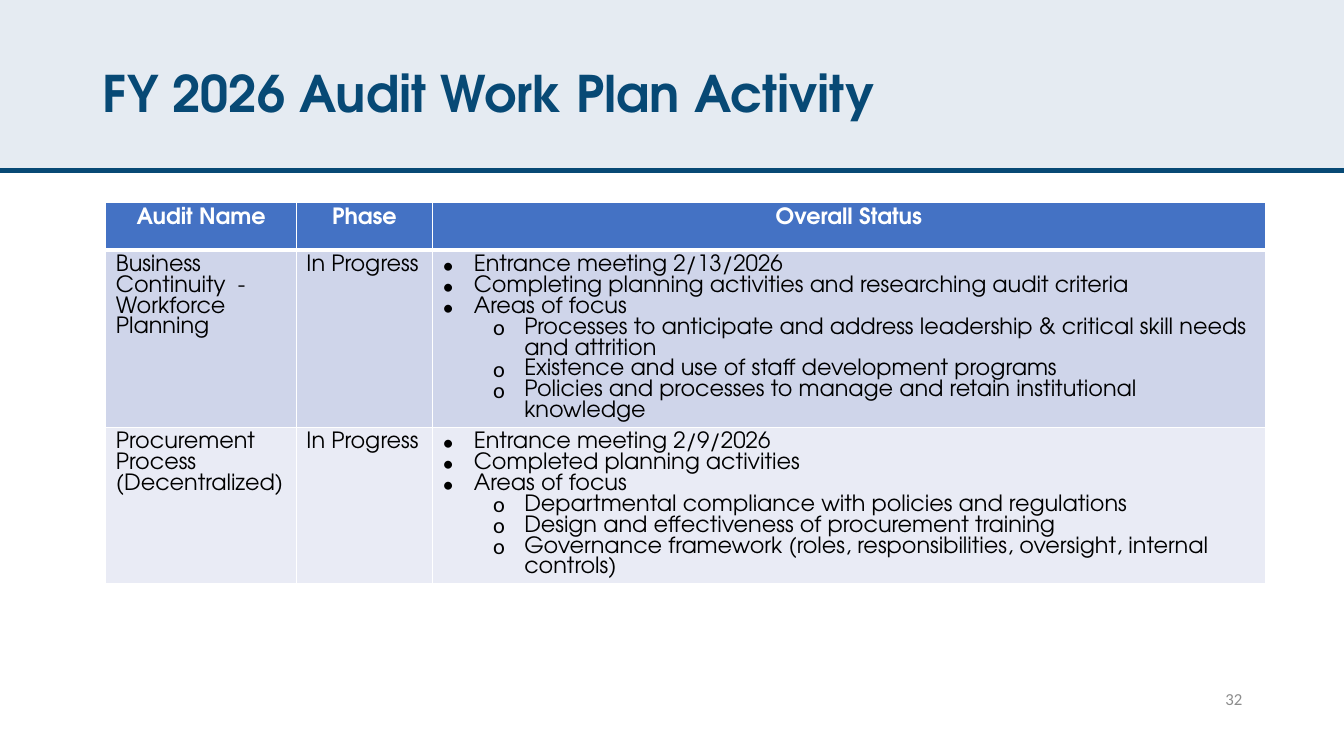
from lxml.etree import SubElement
from pptx import Presentation
from pptx.dml.color import RGBColor
from pptx.enum.shapes import MSO_CONNECTOR as Connector, MSO_SHAPE as Shape
from pptx.enum.text import MSO_ANCHOR as Anchor, PP_ALIGN as Align
from pptx.oxml.ns import qn
from pptx.util import Inches, Pt

NAVY = RGBColor(0x07, 0x49, 0x75)
PALE_BLUE = RGBColor(0xE5, 0xEB, 0xF2)
HEADER_BLUE = RGBColor(0x44, 0x72, 0xC4)
BAND_DARK = RGBColor(0xCF, 0xD5, 0xEA)
BAND_LIGHT = RGBColor(0xE9, 0xEB, 0xF5)
GRAY = RGBColor(0x8C, 0x8C, 0x8C)
WHITE = RGBColor(0xFF, 0xFF, 0xFF)
BLACK = RGBColor(0, 0, 0)
HEADING_FONT = "TeX Gyre Adventor"
PLAIN_FONT = "Calibri"

SLIDE_WIDTH = 13.33
COLUMN_WIDTHS = [1.89, 1.35, 8.26]
ROW_HEIGHTS = [0.47, 1.76, 1.55]
BULLETS = [("•", 0.31), ("o", 0.81)]
BULLET_HANG = 0.31

HEADINGS = ["Audit Name", "Phase", "Overall Status"]
# Each status line is (level, text).
AUDITS = [
    ("Business Continuity  - Workforce Planning", "In Progress", [
        (0, "Entrance meeting 2/13/2026"),
        (0, "Completing planning activities and researching audit criteria"),
        (0, "Areas of focus"),
        (1, "Processes to anticipate and address leadership & critical skill needs and attrition"),
        (1, "Existence and use of staff development programs"),
        (1, "Policies and processes to manage and retain institutional knowledge"),
    ]),
    ("Procurement Process (Decentralized)", "In Progress", [
        (0, "Entrance meeting 2/9/2026"),
        (0, "Completed planning activities"),
        (0, "Areas of focus"),
        (1, "Departmental compliance with policies and regulations"),
        (1, "Design and effectiveness of procurement training"),
        (1, "Governance framework (roles, responsibilities, oversight, internal controls)"),
    ]),
]


def write(para, text, size=16, font=HEADING_FONT, color=BLACK, bold=False,
          align=Align.LEFT, line_spacing=None):
    para.alignment = align
    if line_spacing:
        para.line_spacing = line_spacing
    span = para.add_run()
    span.text = text
    span.font.size = Pt(size)
    span.font.name = font
    span.font.bold = bold
    span.font.color.rgb = color


def add_bullet(para, level):
    mark, indent = BULLETS[level]
    para.level = level
    properties = para._p.get_or_add_pPr()
    properties.set("marL", str(Inches(indent)))
    properties.set("indent", str(-Inches(BULLET_HANG)))
    SubElement(properties, qn("a:buFont"), typeface=PLAIN_FONT)
    SubElement(properties, qn("a:buChar"), char=mark)


def style_cell(cell, fill, bottom=1):
    """Give the cell white borders, then its fill."""
    properties = cell._tc.get_or_add_tcPr()
    for side, width in (("L", 1), ("R", 1), ("T", 1), ("B", bottom)):
        border = SubElement(properties, qn(f"a:ln{side}"), w=str(Pt(width)))
        paint = SubElement(border, qn("a:solidFill"))
        SubElement(paint, qn("a:srgbClr"), val=str(WHITE))
    cell.fill.solid()
    cell.fill.fore_color.rgb = fill


def add_header(page, left, top, width, height):
    band = page.shapes.add_shape(Shape.RECTANGLE, Inches(left), Inches(top),
                                 Inches(width), Inches(height))
    band.shadow.inherit = False
    band.fill.solid()
    band.fill.fore_color.rgb = PALE_BLUE
    band.line.fill.background()

    rule_top = Inches(top + height - 0.01)
    rule = page.shapes.add_connector(Connector.STRAIGHT, Inches(left), rule_top,
                                     Inches(left + width), rule_top)
    rule.line.color.rgb = NAVY
    rule.line.width = Pt(3.5)
    SubElement(rule._element.spPr, qn("a:effectLst"))

    title = page.shapes.title
    title.left, title.top = Inches(left + 0.92), Inches(top + 0.4)
    title.width, title.height = Inches(11.5), Inches(1.1)
    title.text_frame.vertical_anchor = Anchor.MIDDLE
    write(title.text_frame.paragraphs[0], "FY 2026 Audit Work Plan Activity",
          size=36, color=NAVY, bold=True, line_spacing=0.9)
    # Bring the title in front of the band.
    title.element.getparent().append(title.element)


def add_audit_table(page, left, top):
    table = page.shapes.add_table(
        len(ROW_HEIGHTS), len(COLUMN_WIDTHS), Inches(left), Inches(top),
        Inches(sum(COLUMN_WIDTHS)), Inches(sum(ROW_HEIGHTS))).table
    table.horz_banding = False
    for column, width in zip(table.columns, COLUMN_WIDTHS):
        column.width = Inches(width)
    for row, height in zip(table.rows, ROW_HEIGHTS):
        row.height = Inches(height)

    for cell, heading in zip(table.rows[0].cells, HEADINGS):
        style_cell(cell, HEADER_BLUE, bottom=3)
        write(cell.text_frame.paragraphs[0], heading, color=WHITE, bold=True,
              align=Align.CENTER)

    for index, (name, phase, status) in enumerate(AUDITS):
        cells = list(table.rows[index + 1].cells)
        for cell in cells:
            style_cell(cell, BAND_LIGHT if index % 2 else BAND_DARK)
        for cell, text in zip(cells, (name, phase)):
            write(cell.text_frame.paragraphs[0], text)
        frame = cells[2].text_frame
        for number, (level, text) in enumerate(status):
            para = frame.add_paragraph() if number else frame.paragraphs[0]
            add_bullet(para, level)
            write(para, text)
    table.cell(1, 2).vertical_anchor = Anchor.MIDDLE


def add_page_number(page, left, top, width, height):
    box = page.shapes.add_textbox(Inches(left), Inches(top), Inches(width), Inches(height))
    box.text_frame.word_wrap = True
    box.text_frame.vertical_anchor = Anchor.MIDDLE
    write(box.text_frame.paragraphs[0], "32", size=12, font=PLAIN_FONT,
          color=GRAY, align=Align.RIGHT)


def main():
    deck = Presentation()
    deck.slide_width, deck.slide_height = Inches(SLIDE_WIDTH), Inches(7.5)
    page = deck.slides.add_slide(deck.slide_layouts.get_by_name("Title Only"))
    add_header(page, 0, 0, SLIDE_WIDTH, 1.7)
    add_audit_table(page, 1.05, 2.01)
    add_page_number(page, 9.42, 6.73, 3, 0.4)
    deck.save("out.pptx")


if __name__ == "__main__":
    main()
